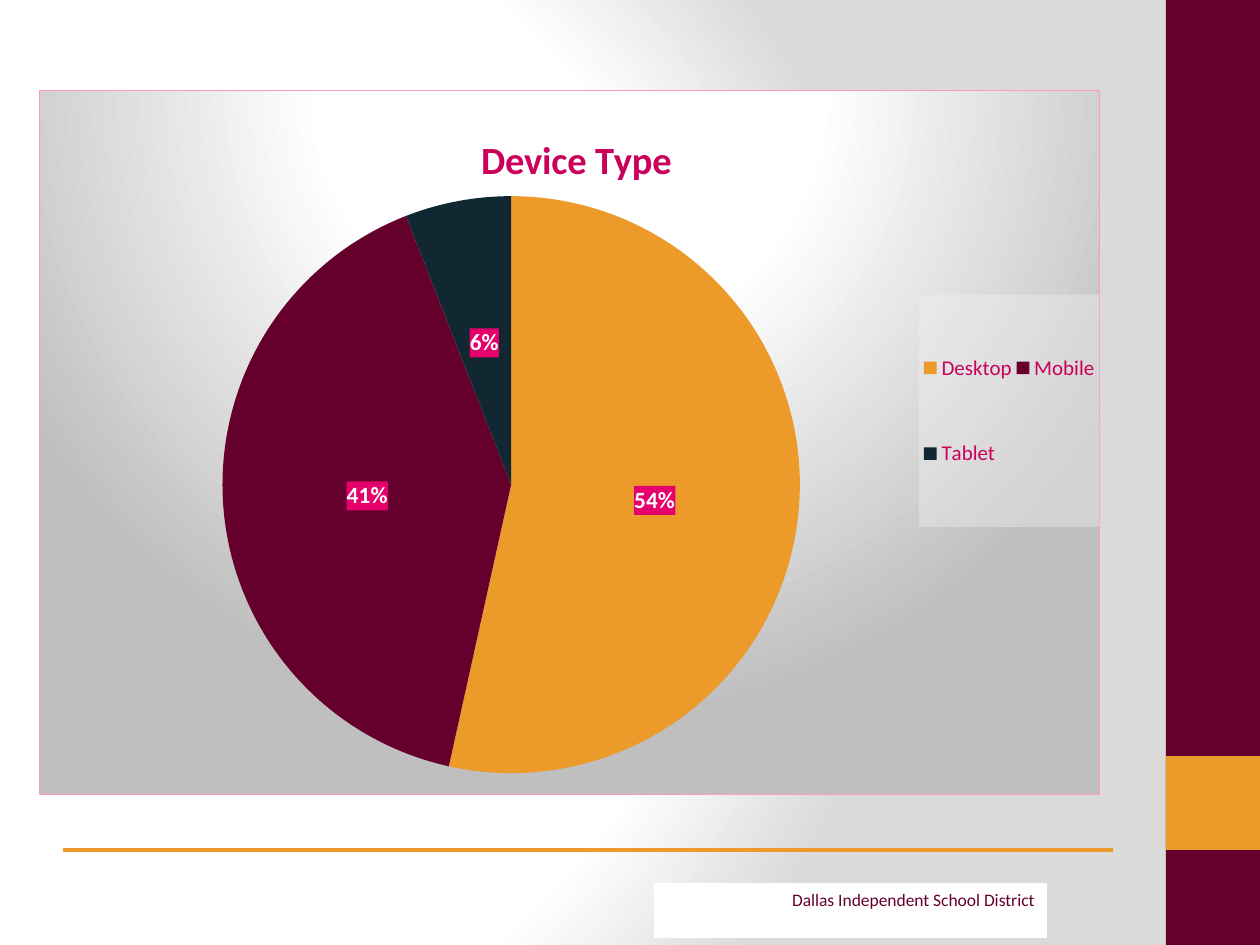
from lxml import etree
from pptx import Presentation
from pptx.chart.data import CategoryChartData
from pptx.dml.color import RGBColor
from pptx.enum.chart import XL_CHART_TYPE, XL_LABEL_POSITION, XL_LEGEND_POSITION
from pptx.enum.shapes import MSO_CONNECTOR, MSO_SHAPE
from pptx.enum.text import MSO_ANCHOR, PP_ALIGN
from pptx.oxml import parse_xml
from pptx.oxml.ns import nsdecls, qn
from pptx.util import Pt

PIE = XL_CHART_TYPE.PIE
CENTER = XL_LABEL_POSITION.CENTER
LEGEND_RIGHT = XL_LEGEND_POSITION.RIGHT
STRAIGHT = MSO_CONNECTOR.STRAIGHT
RECTANGLE = MSO_SHAPE.RECTANGLE
TOP = MSO_ANCHOR.TOP
RIGHT = PP_ALIGN.RIGHT

MAROON = "65002D"
ORANGE = "EC9A29"
NAVY = "112832"
PINK = "CB005B"
WHITE = "FFFFFF"


def px(length):
    return round(length * 914400 / 126)


def color(value):
    return RGBColor.from_string(value)


def format_font(font, size, hue, bold=False):
    font.name = "Calibri"
    font.size = Pt(size)
    font.bold = bold
    font.color.rgb = color(hue)


def write_text(box, text, align=None, **style):
    para = box.text_frame.paragraphs[0]
    para.alignment = align
    span = para.add_run()
    span.text = text
    format_font(span.font, **style)


def circle_gradient(stops, center):
    marks = "".join(
        f'<a:gs pos="{place * 1000}"><a:srgbClr val="{hue}"/></a:gs>' for place, hue in stops
    )
    sides = " ".join(f'{side}="{value * 1000}"' for side, value in zip("ltrb", center))
    return (
        f'<a:gradFill {nsdecls("a")} rotWithShape="1"><a:gsLst>{marks}</a:gsLst>'
        f'<a:path path="circle"><a:fillToRect {sides}/></a:path></a:gradFill>'
    )


def solid_fill(hue, opacity=100):
    return (
        f'<a:solidFill><a:srgbClr val="{hue}">'
        f'<a:alpha val="{opacity * 1000}"/></a:srgbClr></a:solidFill>'
    )


def add_format_before(anchor, inner):
    anchor.addprevious(parse_xml(f'<c:spPr {nsdecls("c", "a")}>{inner}</c:spPr>'))


def set_layout(anchor, inner=False, **sides):
    parent = anchor.getparent()
    for old in parent.findall(qn("c:layout")):
        parent.remove(old)
    target = '<c:layoutTarget val="inner"/>' if inner else ""
    modes = '<c:xMode val="edge"/><c:yMode val="edge"/>'
    values = "".join(f'<c:{side} val="{value}"/>' for side, value in sides.items())
    anchor.addprevious(parse_xml(
        f'<c:layout {nsdecls("c")}><c:manualLayout>{target}{modes}{values}'
        "</c:manualLayout></c:layout>"
    ))


class SlideBuilder:
    def __init__(self, page):
        self.page = page

    def background(self, stops, center):
        self.page.background.fill.solid()
        solid = self.page._element.find(".//" + qn("a:solidFill"))
        solid.getparent().replace(solid, parse_xml(circle_gradient(stops, center)))

    def rectangle(self, left, top, width, height, fill):
        box = self.page.shapes.add_shape(RECTANGLE, px(left), px(top), px(width), px(height))
        box.shadow.inherit = False
        box.fill.solid()
        box.fill.fore_color.rgb = color(fill)
        box.line.fill.background()
        box.text_frame.word_wrap = True
        box.text_frame.vertical_anchor = TOP
        return box

    def rule(self, start, end, top, hue, weight):
        line = self.page.shapes.add_connector(STRAIGHT, px(start), px(top), px(end), px(top))
        line.line.color.rgb = color(hue)
        line.line.width = Pt(weight)
        etree.SubElement(line._element.spPr, qn("a:effectLst"))

    def pie(self, left, top, width, height, title, slices):
        data = CategoryChartData()
        data.categories = [name for name, _, _ in slices]
        data.add_series(title, [value for _, value, _ in slices])
        chart = self.page.shapes.add_chart(
            PIE, px(left), px(top), px(width), px(height), data
        ).chart
        format_font(chart.font, 10, MAROON)
        chart.plots[0].vary_by_categories = True
        series = chart.plots[0].series[0]
        for index, (_, _, hue) in enumerate(slices):
            fill = series.points[index].format.fill
            fill.solid()
            fill.fore_color.rgb = color(hue)
        labels = series.data_labels
        labels.show_value = True
        labels.number_format = '0"%"'
        labels.number_format_is_linked = False
        labels.position = CENTER
        format_font(labels.font, 13.3, WHITE, bold=True)
        chart.has_title = True
        write_text(chart.chart_title, title, size=22, hue=PINK, bold=True)
        chart.has_legend = True
        chart.legend.position = LEGEND_RIGHT
        chart.legend.include_in_layout = False
        format_font(chart.legend.font, 12, PINK)
        self.arrange_pie(chart)

    def arrange_pie(self, chart):
        def part(query):
            return chart._chartSpace.xpath(query)[0]

        set_layout(part(".//c:title/c:overlay"), x=0.41, y=0.05)
        set_layout(part(".//c:pieChart"), inner=True, x=0.17, y=0.15, w=0.55, h=0.82)
        set_layout(part(".//c:legend/c:overlay"), x=0.83, y=0.29, w=0.17, h=0.33)
        add_format_before(part(".//c:ser/c:dLbls/c:txPr"), solid_fill("E6006B"))
        add_format_before(part(".//c:legend/c:txPr"), solid_fill("F2F2F2", 39))
        border = f'<a:ln w="{Pt(0.75)}">{solid_fill("FF99C6")}</a:ln>'
        backdrop = circle_gradient([(0, WHITE), (39, WHITE), (100, "BFBFBF")], (50, -80, 50, 180))
        add_format_before(part("./c:txPr"), backdrop + border)


def main():
    deck = Presentation()
    deck.slide_width, deck.slide_height = px(1260), px(945)
    slide = SlideBuilder(deck.slides.add_slide(deck.slide_layouts[6]))
    slide.background([(0, WHITE), (75, WHITE), (100, "DADADA")], (20, 50, 100, 50))
    slide.rectangle(1166, 0, 94, 945, MAROON)
    slide.rectangle(1166, 756, 94, 94, ORANGE)
    slide.rule(1113, 63, 850, ORANGE, 2)
    footer = slide.rectangle(654, 883, 393, 55, WHITE)
    write_text(footer, "Dallas Independent School District", RIGHT, size=10, hue=MAROON)
    slices = [("Desktop", 54, ORANGE), ("Mobile", 41, MAROON), ("Tablet", 6, NAVY)]
    slide.pie(39, 90, 1061, 705, "Device Type", slices)
    deck.save("out.pptx")


if __name__ == "__main__":
    main()
